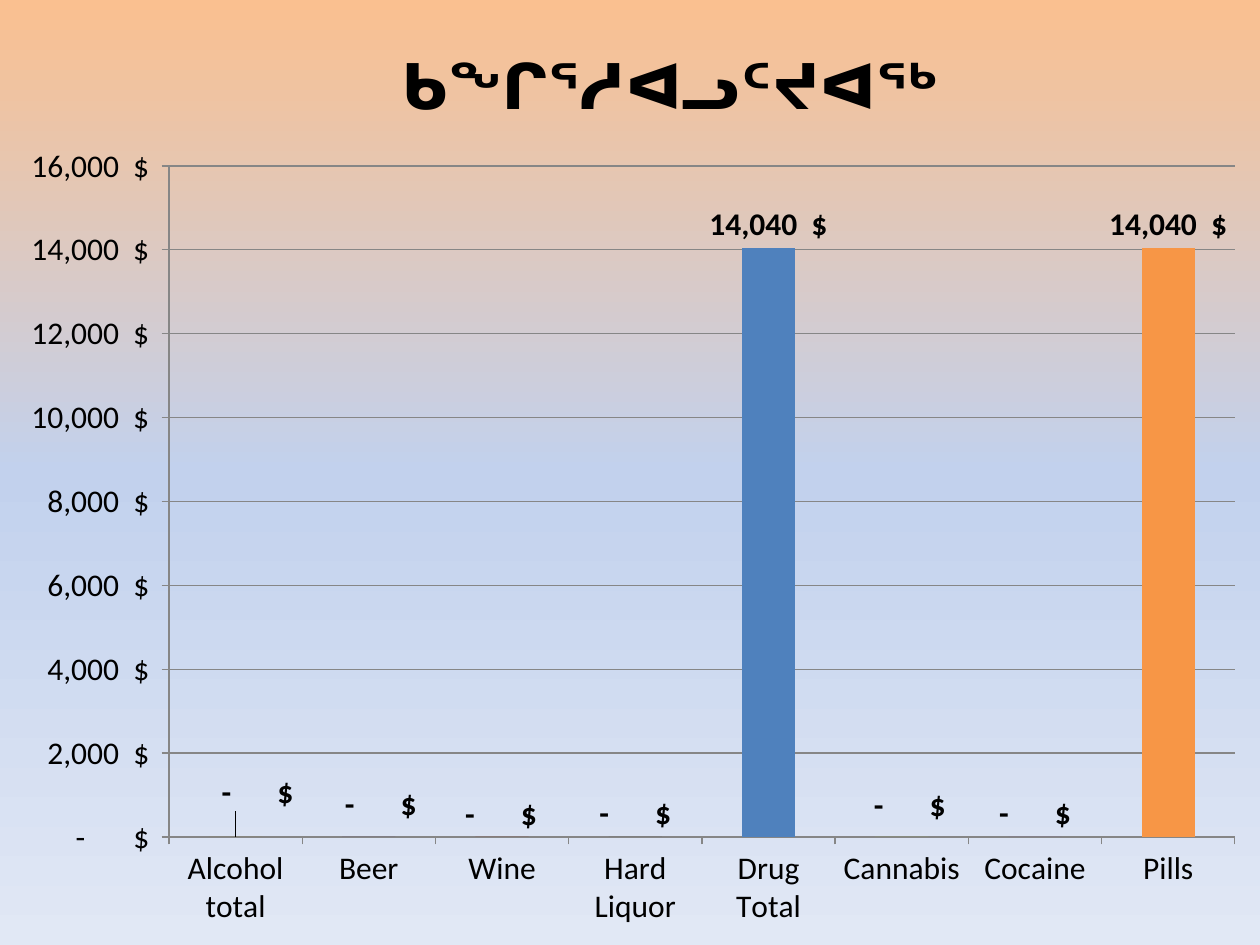
from copy import deepcopy

from lxml.etree import SubElement
from pptx import Presentation
from pptx.chart.data import CategoryChartData
from pptx.dml.color import RGBColor
from pptx.enum.chart import XL_CHART_TYPE, XL_LABEL_POSITION, XL_TICK_MARK
from pptx.oxml import parse_xml
from pptx.oxml.ns import nsdecls, qn
from pptx.util import Emu, Pt

WIDTH, HEIGHT = 1260, 945
MONEY = '_ * #,##0_)\\ "$"_ ;_ * \\(#,##0\\)\\ "$"_ ;_ * "-"??_)\\ "$"_ ;_ @_ '
TITLE = "ᑲᖏᕐᓱᐊᓗᑦᔪᐊᖅ"
SPENDING = [
    ("Alcohol total", 0, "948A54"),
    ("Beer", 0, "604A7B"),
    ("Wine", 0, "953735"),
    ("Hard Liquor", 0, "595959"),
    ("Drug Total", 14040, "4F81BD"),
    ("Cannabis", 0, "9BBB59"),
    ("Cocaine", 0, "8064A2"),
    ("Pills", 14040, "F79646"),
]
LABEL_SHIFTS = {0: (22, -21), 1: (12, -9), 2: (-1, 1), 5: (8, -8)}
BACKGROUND = [(0, "FAC090"), (50, "C2D1ED"), (100, "E1E8F5")]
BODY_FONT = {"name": "Calibri", "size": Pt(18), "bold": False}
LABEL_FONT = {**BODY_FONT, "bold": True}
TITLE_FONT = {**LABEL_FONT, "size": Pt(36)}


def px(n):
    return Emu(round(n * 914400 / 126))


def rgb(value):
    return RGBColor.from_string(value)


def apply(obj, values):
    for name, value in values.items():
        setattr(obj, name, value)


def set_font(font, values):
    apply(font, values)
    font.color.rgb = rgb("000000")


def make_layout(x, y, w=None, h=None, edge=False, inner=False):
    layout = parse_xml(f"<c:layout {nsdecls('c')}><c:manualLayout/></c:layout>")
    values = {}
    if inner:
        values["layoutTarget"] = "inner"
    if edge:
        values.update(xMode="edge", yMode="edge")
    values.update(x=round(x / WIDTH, 4), y=round(y / HEIGHT, 4))
    if w:
        values.update(w=round(w / WIDTH, 4), h=round(h / HEIGHT, 4))
    for name, value in values.items():
        SubElement(layout[0], qn(f"c:{name}")).set("val", str(value))
    return layout


def set_layout(parent, after, layout):
    for old in parent.findall(qn("c:layout")):
        parent.remove(old)
    if after is None:
        parent.insert(0, layout)
    else:
        parent.find(qn(after)).addnext(layout)


def set_background(s):
    fill = s.background.fill
    fill.gradient()
    fill.gradient_angle = 270
    stops = s.element.find(f".//{qn('a:gsLst')}")
    stops.append(deepcopy(stops[-1]))
    for stop, (position, color) in zip(fill.gradient_stops, BACKGROUND):
        stop.position = position / 100
        stop.color.rgb = rgb(color)


def style_axis(axis):
    apply(axis, {"major_tick_mark": XL_TICK_MARK.OUTSIDE,
                 "minor_tick_mark": XL_TICK_MARK.NONE})
    axis.format.line.color.rgb = rgb("868686")
    set_font(axis.tick_labels.font, BODY_FONT)


def style_value_axis(axis):
    style_axis(axis)
    apply(axis, {"minimum_scale": 0, "maximum_scale": 16000,
                 "major_unit": 2000, "has_major_gridlines": True})
    apply(axis.tick_labels, {"number_format": MONEY,
                             "number_format_is_linked": False})
    axis.major_gridlines.format.line.color.rgb = rgb("868686")


def style_title(chart):
    chart.has_title = True
    title = chart.chart_title
    title.include_in_layout = False
    r = title.text_frame.paragraphs[0].add_run()
    r.text = TITLE
    set_font(r.font, TITLE_FONT)
    set_layout(title._element, "c:tx", make_layout(390, 30, edge=True))


def style_series(series):
    labels = series.data_labels
    apply(labels, {"show_value": True, "number_format": MONEY,
                   "number_format_is_linked": False,
                   "position": XL_LABEL_POSITION.OUTSIDE_END})
    set_font(labels.font, LABEL_FONT)
    for i, (_, _, color) in enumerate(SPENDING):
        fill = series.points[i].format.fill
        fill.solid()
        fill.fore_color.rgb = rgb(color)
    for i, shift in LABEL_SHIFTS.items():
        label = series.points[i].data_label
        label.position = XL_LABEL_POSITION.OUTSIDE_END
        set_font(label.font, LABEL_FONT)
    for d in series._element.iter(qn("c:dLbl")):
        i = int(d.find(qn("c:idx")).get("val"))
        set_layout(d, "c:idx", make_layout(*LABEL_SHIFTS[i]))


def add_spending_chart(s):
    data = CategoryChartData(number_format=MONEY)
    names, values, _ = zip(*SPENDING)
    data.categories = names
    data.add_series("Series 1", values)
    chart = s.shapes.add_chart(XL_CHART_TYPE.COLUMN_CLUSTERED, 0, 0,
                               px(WIDTH), px(HEIGHT), data).chart
    chart.has_legend = False
    set_font(chart.font, BODY_FONT)
    style_title(chart)
    style_axis(chart.category_axis)
    style_value_axis(chart.value_axis)
    plot = chart.plots[0]
    apply(plot, {"gap_width": 150, "vary_by_categories": False})
    style_series(plot.series[0])
    area = chart.element.find(f".//{qn('c:plotArea')}")
    set_layout(area, None, make_layout(169, 166, 1066, 671, True, True))


def main():
    prs = Presentation()
    apply(prs, {"slide_width": px(WIDTH), "slide_height": px(HEIGHT)})
    s = prs.slides.add_slide(prs.slide_layouts[6])
    set_background(s)
    add_spending_chart(s)
    prs.save("out.pptx")


if __name__ == "__main__":
    main()
